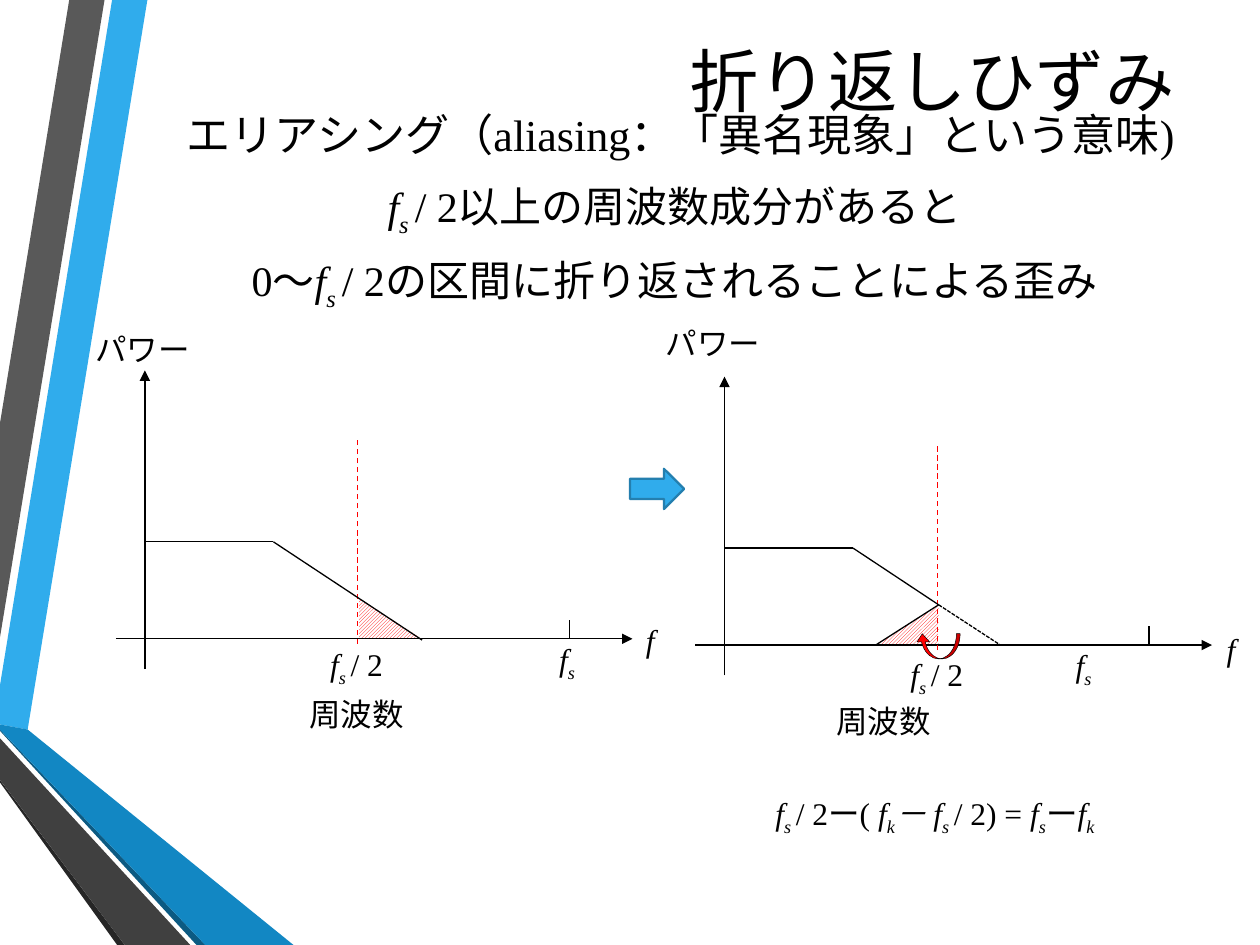
from lxml import etree
from pptx import Presentation
from pptx.dml.color import RGBColor
from pptx.enum import dml, shapes, text
from pptx.oxml import ns
from pptx.util import Inches, Pt

SERIF, SANS = "Times New Roman", "Cabin"
BLACK, RED, BLUE = "000000", "FF0000", "30ACEC"

RIBBONS = [
    (BLUE, [(0, 5.44), (0, 5.75), (0.22, 5.79), (1.17, 0), (0.89, 0)]),
    ("595959", [(0.83, 0), (0.55, 0), (0, 3.36), (0, 5.06)]),
    ("262626", [(0, 6.19), (0, 6.21), (0.93, 7.5), (0.99, 7.5)]),
    ("0C5A82", [(0, 5.79), (0, 5.8), (1.56, 7.5), (1.63, 7.5)]),
    ("1287C3", [(0, 5.79), (1.63, 7.5), (2.33, 7.5), (0.22, 5.79), (0, 5.75)]),
    ("404040", [(0, 6.19), (0.99, 7.5), (1.51, 7.5), (0, 5.86)]),
]

F, S, K = ("f", "italic"), ("s", "sub"), ("k", "sub")
S_GAP = ("s ", "sub")
HALF = [F, S_GAP, ("/ 2", "")]
TITLE = [
    [("折り返しひずみ", "", 39.6, SANS)],
    [("エリアシング（aliasing：「異名現象」という意味)", "", 25.2, SERIF)],
]
BODY = [
    [F, S_GAP, ("/ 2以上の周波数成分があると", "")],
    [("0～", ""), F, S_GAP, ("/ 2の区間に折り返されることによる歪み", "")],
]
FORMULA = [F, S_GAP, ("/ 2ー( ", ""), F, K, ("－ f", "italic"), S_GAP,
           ("/ 2) =", ""), (" f", "italic"), S, ("ー", ""), F, K]
POWER, FREQUENCY = [("パワー", "")], [("周波数", "")]
LABELS = [
    (POWER, 0.47, 2.57, 1.32, SANS),
    ([F, S], 3.84, 5.03, 1.32, SERIF),
    ([F], 4.5, 4.88, 1.32, SERIF),
    (HALF, 2.17, 5.07, 1.32, SERIF),
    (FREQUENCY, 2.17, 5.47, 1.32, SERIF),
    (POWER, 5, 2.52, 1.32, SANS),
    ([F, S], 7.94, 5.08, 1.32, SERIF),
    ([F], 9.46, 4.95, 0.62, SERIF),
    (HALF, 6.89, 5.15, 1.09, SERIF),
    (FREQUENCY, 6.35, 5.52, 1.32, SERIF),
    (FORMULA, 5.92, 6.25, 3, SERIF),
]

AXES = [
    ((0.92, 5.07), (5.02, 5.07), {"arrow": True}),
    ((1.15, 5.31), (1.15, 2.94), {"arrow": True}),
    ((4.52, 5.07), (4.52, 4.92), {}),
    ((2.84, 5.11), (2.84, 3.49), {"color": RED, "dash": dml.MSO_LINE.DASH}),
    ((1.15, 4.3), (2.17, 4.3), {}),
]
ORIGINAL_SPECTRUM = [((2.17, 4.3), (3.35, 5.08), {})]
FOLDED_SPECTRUM = [
    ((2.17, 4.3), (2.85, 4.75), {}),
    ((2.35, 5.07), (2.85, 4.75), {}),
    ((2.85, 4.75), (3.34, 5.07), {"dash": dml.MSO_LINE.SQUARE_DOT}),
]
GRAPHS = [
    ((0, 0), AXES + ORIGINAL_SPECTRUM, 2.85, False),
    ((4.6, 0.05), AXES + FOLDED_SPECTRUM, 2.35, True),
]

presentation = Presentation()
presentation.slide_width, presentation.slide_height = Inches(10), Inches(7.5)
slide = presentation.slides.add_slide(presentation.slide_layouts[6])


def rgb(value):
    return RGBColor.from_string(value)


def add_text(paragraphs, left, top, width, height, size=18, font=SERIF,
             align=text.PP_ALIGN.CENTER, anchor=text.MSO_ANCHOR.TOP,
             spacing=None, before=0, after=0, bottom=0.05, grow=False):
    box = slide.shapes.add_textbox(*map(Inches, (left, top, width, height)))
    frame = box.text_frame
    frame.word_wrap = True
    frame.vertical_anchor = anchor
    frame.margin_bottom = Inches(bottom)
    if grow:
        frame.auto_size = text.MSO_AUTO_SIZE.SHAPE_TO_FIT_TEXT
    for index, runs in enumerate(paragraphs):
        paragraph = frame.add_paragraph() if index else frame.paragraphs[0]
        paragraph.alignment = align
        paragraph.space_before = Pt(before if index else 0)
        paragraph.space_after = Pt(after)
        if spacing:
            paragraph.line_spacing = spacing
        for words, style, *custom in runs:
            run = paragraph.add_run()
            run.text = words
            run_size, run_font = custom or (size, font)
            run.font.size, run.font.name = Pt(run_size), run_font
            run.font.color.rgb = rgb(BLACK)
            run.font.italic = style in ("italic", "sub")
            if style == "sub":
                run.font._element.set("baseline", "-25000")


def add_line(start, end, color=BLACK, dash=None, arrow=False):
    line = slide.shapes.add_connector(
        shapes.MSO_CONNECTOR.STRAIGHT, *map(Inches, start + end))
    line.line.color.rgb = rgb(color)
    line.line.width = Pt(0.75)
    if dash:
        line.line.dash_style = dash
    if arrow:
        etree.SubElement(line.line._get_or_add_ln(), ns.qn("a:tailEnd"), type="triangle")
    etree.SubElement(line._element.spPr, ns.qn("a:effectLst"))


def add_preset(kind, left, top, width, height, flip=False):
    shape = slide.shapes.add_shape(kind, *map(Inches, (left, top, width, height)))
    shape.shadow.inherit = False
    if flip:
        shape._element.spPr.xfrm.set("flipH", "1")
    return shape


def paint(shape, fill, line=None, width=0):
    shape.fill.solid()
    shape.fill.fore_color.rgb = rgb(fill)
    if line:
        shape.line.color.rgb = rgb(line)
        shape.line.width = Pt(width)
    else:
        shape.line.fill.background()


for color, points in RIBBONS:
    start, *rest = [(Inches(x), Inches(y)) for x, y in points]
    builder = slide.shapes.build_freeform(*start)
    builder.add_line_segments(rest, close=True)
    ribbon = builder.convert_to_shape()
    ribbon.shadow.inherit = False
    paint(ribbon, color)

add_text(TITLE, 0.92, 0.46, 8.5, 1.12, align=text.PP_ALIGN.RIGHT,
         anchor=text.MSO_ANCHOR.MIDDLE, spacing=0.75, bottom=0.37)
add_text(BODY, 0.92, 1.39, 8.87, 1.06, size=24, spacing=0.9, before=7, after=6)
for runs, left, top, width, font in LABELS:
    add_text([runs], left, top, width, 0.4, font=font, grow=True)

arrow = add_preset(shapes.MSO_SHAPE.RIGHT_ARROW, 5, 3.72, 0.43, 0.32)
paint(arrow, BLUE, "247FAF", 1.25)

for (dx, dy), lines, triangle_left, flip in GRAPHS:
    triangle = add_preset(shapes.MSO_SHAPE.RIGHT_TRIANGLE, triangle_left + dx,
                          4.75 + dy, 0.5, 0.32, flip)
    triangle.fill.patterned()
    triangle.fill.pattern = dml.MSO_PATTERN.LIGHT_UPWARD_DIAGONAL
    triangle.fill.fore_color.rgb = rgb(RED)
    triangle.fill.back_color.rgb = rgb("FFFFFF")
    triangle.line.fill.background()
    for (x1, y1), (x2, y2), style in lines:
        add_line((x1 + dx, y1 + dy), (x2 + dx, y2 + dy), **style)

fold = add_preset(shapes.MSO_SHAPE.CURVED_UP_ARROW, 7.27, 5.03, 0.35, 0.2, flip=True)
for index, value in enumerate((0.145, 0.5, 0.328)):
    fold.adjustments[index] = value
paint(fold, RED, BLACK, 0.25)

presentation.save("out.pptx")
